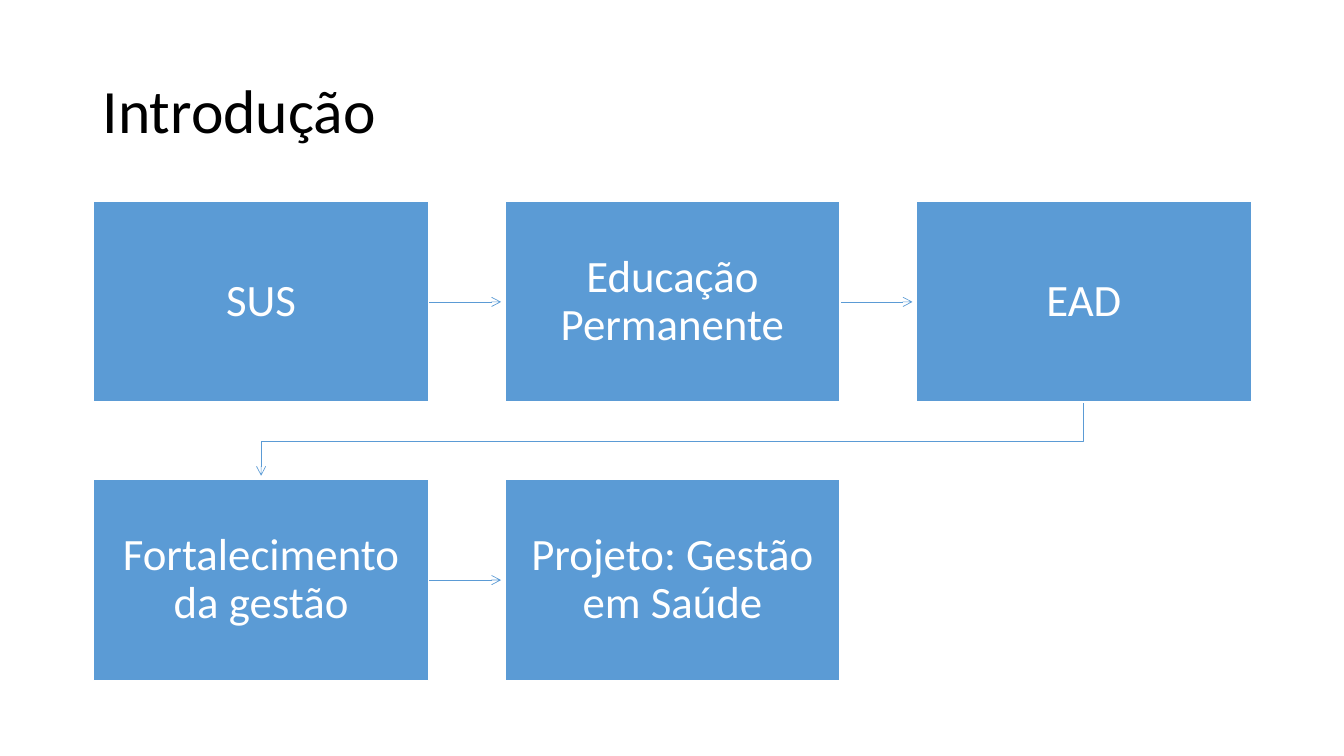
from lxml import etree
from pptx import Presentation
from pptx.dml.color import RGBColor
from pptx.enum.shapes import MSO_CONNECTOR, MSO_SHAPE
from pptx.enum.text import MSO_ANCHOR, PP_ALIGN
from pptx.oxml.ns import qn
from pptx.util import Inches, Pt

RECT = MSO_SHAPE.RECTANGLE
STRAIGHT = MSO_CONNECTOR.STRAIGHT
MIDDLE = MSO_ANCHOR.MIDDLE
LEFT, CENTER = PP_ALIGN.LEFT, PP_ALIGN.CENTER

COLORS = {"blue": "5B9BD5", "white": "FFFFFF", "black": "000000"}
FONT = "Calibri"
STEPS = ["SUS", "Educação Permanente", "EAD",
         "Fortalecimento da gestão", "Projeto: Gestão em Saúde"]
COLS = 3
BOX_W, BOX_H = 3.32, 1.99
STEP_X, STEP_Y = 4.08, 2.76
TIP = 0.04  # space between an arrow tip and the next box


def color(name):
    return RGBColor.from_string(COLORS[name])


def write(shape, text, size, ink, align):
    frame = shape.text_frame
    frame.text = text
    frame.word_wrap = True
    frame.vertical_anchor = MIDDLE
    para = frame.paragraphs[0]
    para.alignment = align
    para.line_spacing = 0.9
    para.font.name = FONT
    para.font.size = Pt(size)
    para.font.color.rgb = color(ink)
    return frame


def add_title(slide, text, left, top, width, height):
    box = slide.shapes.add_textbox(*map(Inches, (left, top, width, height)))
    write(box, text, 44, "black", LEFT)


def add_step(slide, text, left, top):
    box = slide.shapes.add_shape(
        RECT, *map(Inches, (left, top, BOX_W, BOX_H)))
    box.shadow.inherit = False
    box.fill.solid()
    box.fill.fore_color.rgb = color("blue")
    box.line.color.rgb = color("white")
    box.line.width = Pt(1)
    frame = write(box, text, 32, "white", CENTER)
    frame.margin_left = frame.margin_right = Inches(0.25)
    frame.margin_top = frame.margin_bottom = Inches(0.25)


def style_arrow(arrow):
    arrow.line.color.rgb = color("blue")
    arrow.line.width = Pt(0.5)
    etree.SubElement(arrow.line._get_or_add_ln(), qn("a:tailEnd"), type="arrow")


def add_arrow(slide, start, end):
    """Link two boxes of one row, or turn down to the next row."""
    (x1, y1), (x2, y2) = start, end
    if y1 == y2:
        mid = y1 + BOX_H / 2
        ends = (x1 + BOX_W, mid, x2 - TIP, mid)
        arrow = slide.shapes.add_connector(STRAIGHT, *map(Inches, ends))
        etree.SubElement(arrow._element.spPr, qn("a:effectLst"))
    else:
        x1, x2 = x1 + BOX_W / 2, x2 + BOX_W / 2
        y1 += BOX_H
        turn = (y1 + y2) / 2
        points = [(Inches(x), Inches(y)) for x, y in
                  ((x1, y1), (x1, turn), (x2, turn), (x2, y2 - TIP))]
        path = slide.shapes.build_freeform(*points[0])
        path.add_line_segments(points[1:], close=False)
        arrow = path.convert_to_shape()
        arrow.fill.background()
        arrow.shadow.inherit = False
    style_arrow(arrow)


def add_flow(slide, left, top):
    spots = [(left + i % COLS * STEP_X, top + i // COLS * STEP_Y)
             for i in range(len(STEPS))]
    for start, end in zip(spots, spots[1:]):
        add_arrow(slide, start, end)
    for text, spot in zip(STEPS, spots):
        add_step(slide, text, *spot)


def main():
    deck = Presentation()
    deck.slide_width, deck.slide_height = Inches(13.33), Inches(7.5)
    slide = deck.slides.add_slide(deck.slide_layouts[6])
    add_title(slide, "Introdução", 0.92, 0.4, 11.5, 1.45)
    add_flow(slide, 0.93, 2)
    deck.save("out.pptx")


if __name__ == "__main__":
    main()
